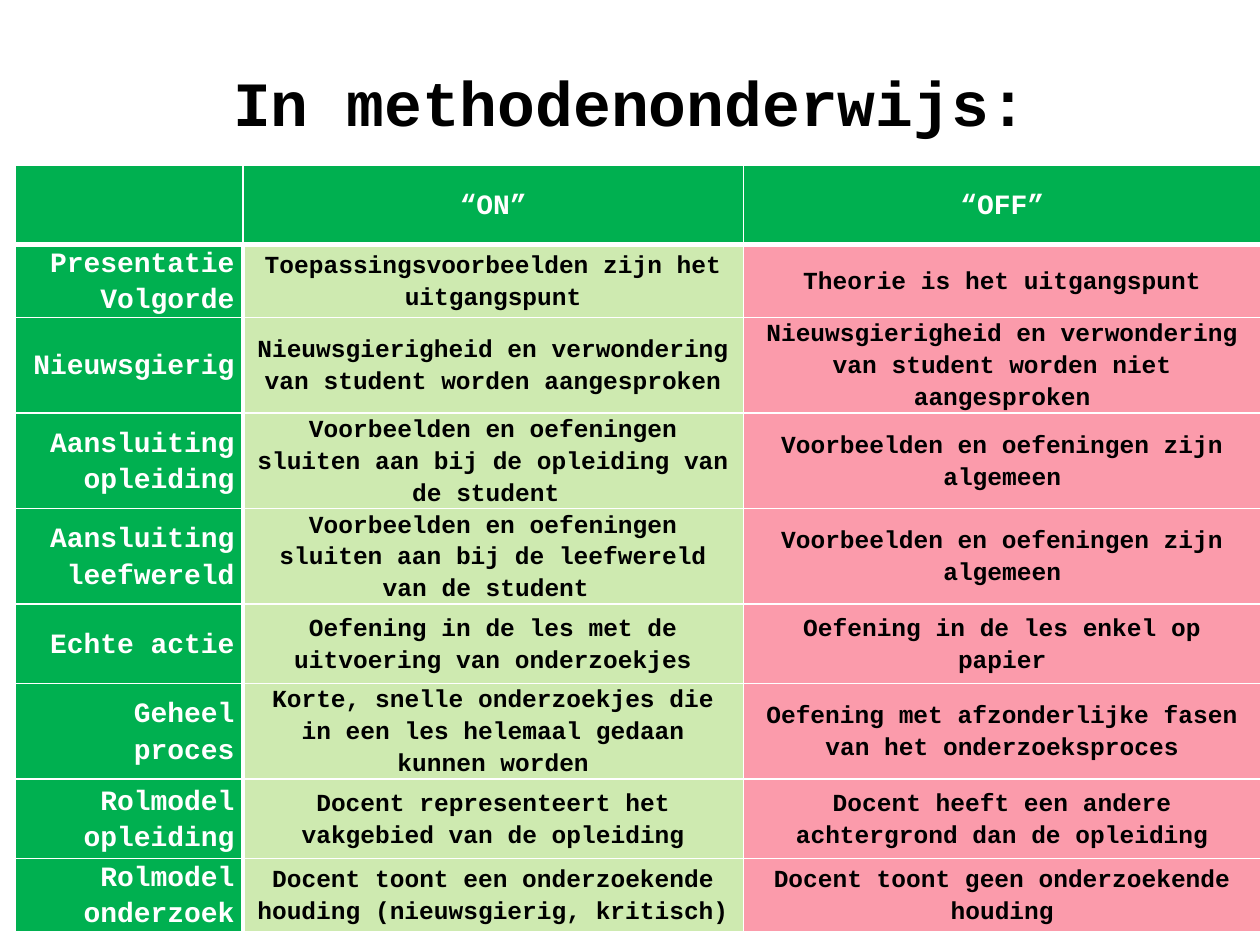
from pptx import Presentation
from pptx.dml.color import RGBColor
from pptx.enum.text import MSO_ANCHOR as Anchor, PP_ALIGN as Align
from pptx.oxml import parse_xml
from pptx.oxml.ns import nsdecls
from pptx.util import Inches, Pt

FONT = "Courier New"
COLORS = {"green": "00B050", "on": "CEEAB0", "off": "FB9BAB",
          "white": "FFFFFF", "black": "000000"}


def style_paragraph(para, size, color, align):
    para.alignment = align
    for span in para.runs:
        span.font.name = FONT
        span.font.size = Pt(size)
        span.font.bold = True
        span.font.color.rgb = RGBColor.from_string(COLORS[color])


def add_borders(cell, widths):
    # Border lines must precede the fill, so this runs before the fill is set
    properties = cell._tc.get_or_add_tcPr()
    for side, width in widths.items():
        properties.append(parse_xml(
            f'<a:ln{side} {nsdecls("a")} w="{Pt(width)}"><a:solidFill>'
            f'<a:srgbClr val="{COLORS["white"]}"/></a:solidFill></a:ln{side}>'))


deck = Presentation()
deck.slide_width, deck.slide_height = Inches(10), Inches(7.5)
page = deck.slides.add_slide(deck.slide_layouts[6])

# Comparison table
rows = [
    ("", "“ON”", "“OFF”"),
    ("Presentatie\nVolgorde", "Toepassingsvoorbeelden zijn het uitgangspunt",
     "Theorie is het uitgangspunt"),
    ("Nieuwsgierig",
     "Nieuwsgierigheid en verwondering van student worden aangesproken",
     "Nieuwsgierigheid en verwondering van student worden niet aangesproken"),
    ("Aansluiting opleiding",
     "Voorbeelden en oefeningen sluiten aan bij de opleiding van de student ",
     "Voorbeelden en oefeningen zijn algemeen"),
    ("Aansluiting leefwereld",
     "Voorbeelden en oefeningen sluiten aan bij de leefwereld van de student ",
     "Voorbeelden en oefeningen zijn algemeen"),
    ("Echte actie", "Oefening in de les met de uitvoering van onderzoekjes",
     "Oefening in de les enkel op papier"),
    ("Geheel proces",
     "Korte, snelle onderzoekjes die in een les helemaal gedaan kunnen worden",
     "Oefening met afzonderlijke fasen van het onderzoeksproces"),
    ("Rolmodel opleiding",
     "Docent representeert het vakgebied van de opleiding",
     "Docent heeft een andere achtergrond dan de opleiding"),
    ("Rolmodel onderzoek",
     "Docent toont een onderzoekende houding (nieuwsgierig, kritisch)",
     "Docent toont geen onderzoekende houding"),
]
column_widths = [1.81, 3.97, 4.11]
row_heights = [0.63, 0.55, 0.55, 0.63, 0.63, 0.63, 0.55, 0.63, 0.58]
table = page.shapes.add_table(len(rows), 3, Inches(0.12), Inches(1.31),
                              Inches(9.88), Inches(5.48)).table
for column, width in zip(table.columns, column_widths):
    column.width = Inches(width)
for row, height in zip(table.rows, row_heights):
    row.height = Inches(height)

for r, texts in enumerate(rows):
    for c, text in enumerate(texts):
        cell = table.cell(r, c)
        # Thick lines set the header row and the label column apart
        add_borders(cell, {"L": 3 if r and c == 1 else 1,
                           "R": 3 if r and c == 0 else 1,
                           "T": 3 if r == 1 else 1,
                           "B": 3 if r == 0 else 1})
        is_heading = r == 0 or c == 0
        fill = "green" if is_heading else ("on", "off")[c - 1]
        cell.fill.solid()
        cell.fill.fore_color.rgb = RGBColor.from_string(COLORS[fill])
        cell.vertical_anchor = Anchor.MIDDLE
        cell.margin_left = cell.margin_right = Inches(0.07)
        cell.margin_top = cell.margin_bottom = 0
        cell.text_frame.text = text
        for para in cell.text_frame.paragraphs:
            para.line_spacing = 1.15
            style_paragraph(para, 16 if is_heading else 14,
                            "white" if is_heading else "black",
                            Align.RIGHT if c == 0 else Align.CENTER)

# Title
title = page.shapes.add_textbox(Inches(0.75), Inches(0.36),
                                Inches(8.5), Inches(0.71))
title.text_frame.word_wrap = True
title.text_frame.margin_top = Inches(0.14)
title.text_frame.margin_bottom = 0
title.text_frame.text = "In methodenonderwijs:"
style_paragraph(title.text_frame.paragraphs[0], 36, "black", Align.CENTER)

deck.save("out.pptx")
